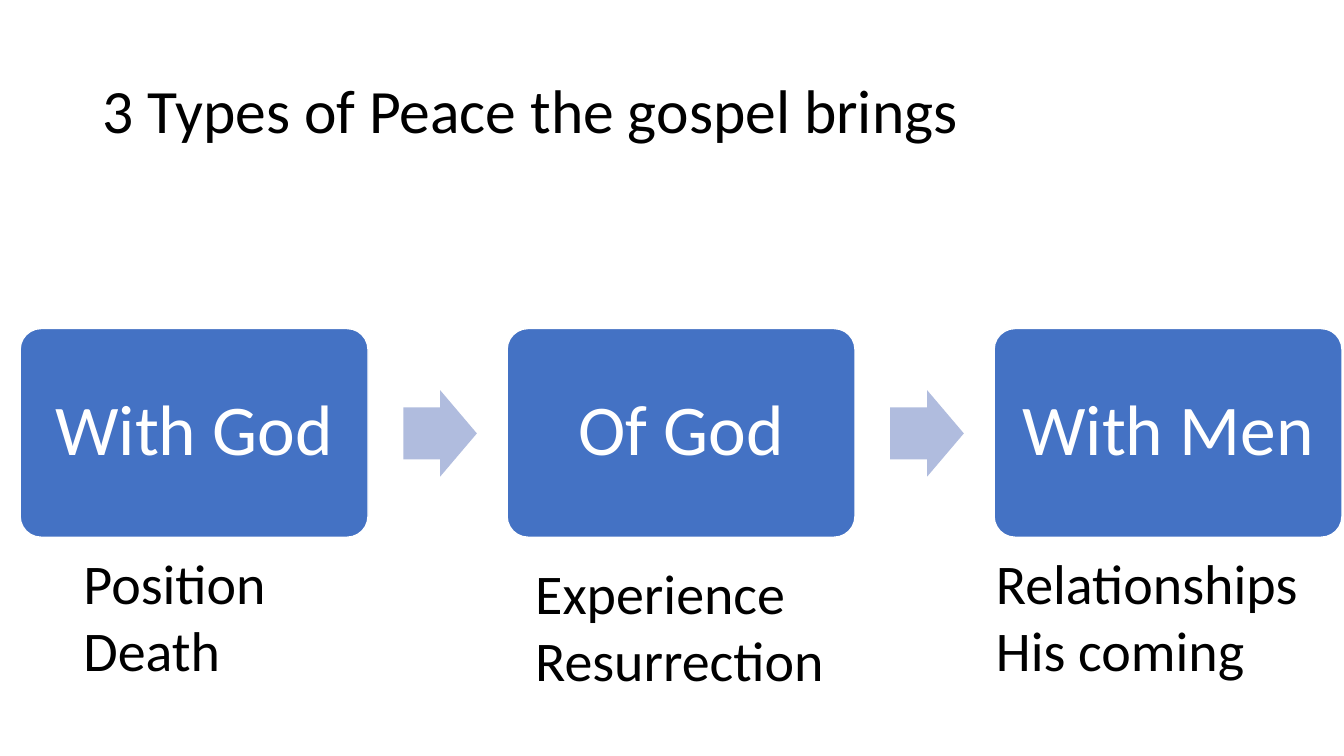
from pptx import Presentation
from pptx.dml.color import RGBColor
from pptx.enum.shapes import MSO_SHAPE
from pptx.enum.text import MSO_ANCHOR, MSO_AUTO_SIZE, PP_ALIGN
from pptx.util import Inches, Pt

BLACK = RGBColor(0x00, 0x00, 0x00)
WHITE = RGBColor(0xFF, 0xFF, 0xFF)
BLUE = RGBColor(0x44, 0x72, 0xC4)
PALE_BLUE = RGBColor(0xB0, 0xBC, 0xDE)

FIRST_LEFT = 0.2
STEP = 4.83
ARROW_OFFSET = 3.8

# Box label, caption lines, caption left, top and width, caption wrapping
PEACE_TYPES = [
    ("With God", ["Position", "Death"], 0.73, 5.39, 2.03, False),
    ("Of God", ["Experience", "Resurrection"], 5.21, 5.49, 3.1, False),
    ("With Men", ["Relationships", "His coming"], 9.78, 5.39, 3.36, True),
]


def style_paragraph(paragraph, size, color, alignment=PP_ALIGN.LEFT):
    paragraph.alignment = alignment
    paragraph.font.name = "Calibri"
    paragraph.font.size = Pt(size)
    paragraph.font.color.rgb = color


def add_filled_shape(preset, left, top, width, height, color):
    shape = slide.shapes.add_shape(
        preset, Inches(left), Inches(top), Inches(width), Inches(height))
    shape.shadow.inherit = False
    shape.fill.solid()
    shape.fill.fore_color.rgb = color
    shape.line.fill.background()
    return shape


presentation = Presentation()
presentation.slide_width = Inches(13.33)
presentation.slide_height = Inches(7.5)
slide = presentation.slides.add_slide(presentation.slide_layouts[5])

title = slide.shapes.title
title.left, title.top = Inches(0.92), Inches(0.4)
title.width, title.height = Inches(11.5), Inches(1.45)
title.text_frame.text = "3 Types of Peace the gospel brings"
title.text_frame.vertical_anchor = MSO_ANCHOR.MIDDLE
title.text_frame.auto_size = MSO_AUTO_SIZE.NONE
title_paragraph = title.text_frame.paragraphs[0]
title_paragraph.line_spacing = 0.9
style_paragraph(title_paragraph, 44, BLACK)

for index, (label, lines, left, top, width, wrap) in enumerate(PEACE_TYPES):
    box_left = FIRST_LEFT + index * STEP
    box = add_filled_shape(
        MSO_SHAPE.ROUNDED_RECTANGLE, box_left, 3.26, 3.45, 2.07, BLUE)
    box.adjustments[0] = 0.1
    box.line.color.rgb = WHITE
    box.line.width = Pt(1)

    box_frame = box.text_frame
    box_frame.text = label
    box_frame.word_wrap = True
    box_frame.vertical_anchor = MSO_ANCHOR.MIDDLE
    box_frame.margin_left = box_frame.margin_right = Inches(0.2)
    box_paragraph = box_frame.paragraphs[0]
    box_paragraph.line_spacing = 0.9
    style_paragraph(box_paragraph, 51, WHITE, PP_ALIGN.CENTER)

    if index < len(PEACE_TYPES) - 1:
        arrow = add_filled_shape(
            MSO_SHAPE.RIGHT_ARROW, box_left + ARROW_OFFSET, 3.87, 0.73, 0.86, PALE_BLUE)
        arrow.adjustments[0] = 0.6
        arrow.adjustments[1] = 0.5

    caption = slide.shapes.add_textbox(
        Inches(left), Inches(top), Inches(width), Inches(1.45))
    caption_frame = caption.text_frame
    caption_frame.text = "\n".join(lines)
    caption_frame.word_wrap = wrap
    caption_frame.auto_size = MSO_AUTO_SIZE.SHAPE_TO_FIT_TEXT
    for paragraph in caption_frame.paragraphs:
        style_paragraph(paragraph, 40, BLACK)

presentation.save("out.pptx")
